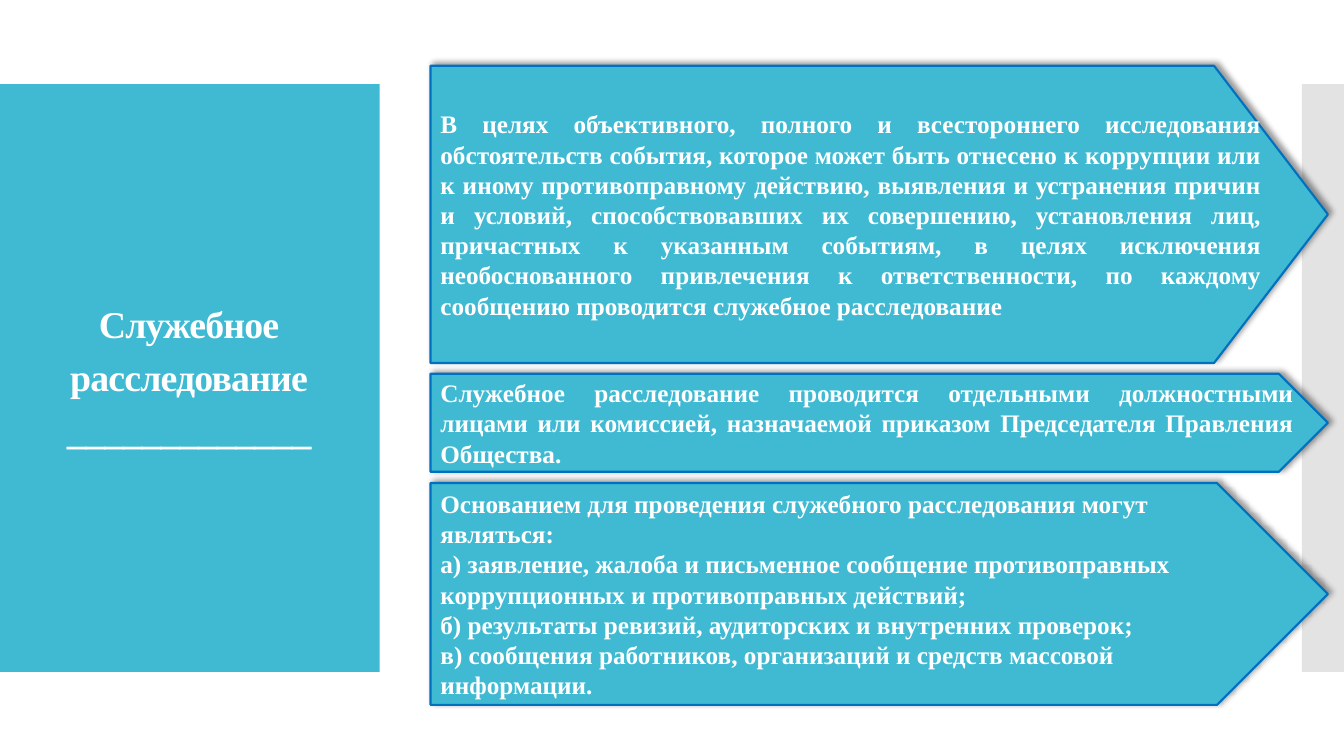
from copy import deepcopy

from lxml.etree import SubElement
from pptx import Presentation
from pptx.dml.color import RGBColor
from pptx.enum.shapes import MSO_SHAPE
from pptx.enum.text import MSO_ANCHOR, MSO_AUTO_SIZE, PP_ALIGN
from pptx.oxml.ns import qn
from pptx.util import Pt

TEAL = RGBColor(0x40, 0xBA, 0xD2)
BLUE = RGBColor(0x00, 0x70, 0xC0)
GRAY = RGBColor(0xC8, 0xC8, 0xC8)
WHITE = RGBColor(0xFF, 0xFF, 0xFF)
BLACK = RGBColor(0x00, 0x00, 0x00)

SLIDE_WIDTH, SLIDE_HEIGHT = 960, 540
BAND_TOP, BAND_HEIGHT = 60, 420
ARROW_LEFT, ARROW_WIDTH = 307.5, 641

TITLE_LINES = [("Служебное", 27), ("расследование", 27), ("_____________", 28)]

PURPOSE = [
    "В целях объективного, полного и всестороннего исследования обстоятельств "
    "события, которое может быть отнесено к коррупции или к иному противоправному "
    "действию, выявления и устранения причин и условий, способствовавших их "
    "совершению, установления лиц, причастных к указанным событиям, в целях "
    "исключения необоснованного привлечения к ответственности, по каждому "
    "сообщению проводится служебное расследование",
]
INVESTIGATORS = [
    "Служебное расследование проводится отдельными должностными лицами или "
    "комиссией, назначаемой приказом Председателя Правления Общества.",
]
GROUNDS = [
    "Основанием для проведения служебного расследования могут являться:",
    "а) заявление, жалоба и письменное сообщение противоправных коррупционных "
    "и противоправных действий;",
    "б) результаты ревизий, аудиторских и внутренних проверок;",
    "в) сообщения работников, организаций и средств массовой информации.",
]

# top, height, point depth relative to height, alignment, paragraphs
ARROWS = [
    (267, 70, 0.5, PP_ALIGN.JUSTIFY, INVESTIGATORS),
    (345, 158.5, 0.5, PP_ALIGN.LEFT, GROUNDS),
    (47, 212.3, 0.383, PP_ALIGN.JUSTIFY, PURPOSE),
]


def add_text(paragraph, text, size=18, color=WHITE, font="Times New Roman", bold=True, spacing=None):
    run = paragraph.add_run()
    run.text = text
    run.font.size = Pt(size)
    run.font.name = font
    run.font.bold = bold
    run.font.color.rgb = color
    if spacing is not None:
        run._r.get_or_add_rPr().set("spc", str(round(spacing * 100)))
    return run


def set_alpha(color_element, percent):
    SubElement(color_element, qn("a:alpha"), val=str(percent * 1000))


class SlideBuilder:
    def __init__(self, slide, fill=TEAL, outline=BLUE):
        self.slide = slide
        self.fill = fill
        self.outline = outline

    def add_filled_shape(self, kind, left, top, width, height, color):
        shape = self.slide.shapes.add_shape(kind, Pt(left), Pt(top), Pt(width), Pt(height))
        shape.shadow.inherit = False
        shape.fill.solid()
        shape.fill.fore_color.rgb = color
        shape.line.fill.background()
        return shape

    def add_band(self, left, width, color, opacity=None):
        band = self.add_filled_shape(MSO_SHAPE.RECTANGLE, left, BAND_TOP, width, BAND_HEIGHT, color)
        if opacity is not None:
            set_alpha(band._element.spPr.find(".//" + qn("a:srgbClr")), opacity)

    def add_title(self, lines, left, top, width, height):
        title = self.slide.shapes.title
        title.left, title.top, title.width, title.height = map(Pt, (left, top, width, height))
        frame = title.text_frame
        frame.word_wrap = True
        frame.auto_size = MSO_AUTO_SIZE.NONE
        frame.vertical_anchor = MSO_ANCHOR.MIDDLE
        paragraph = frame.paragraphs[0]
        paragraph.alignment = PP_ALIGN.CENTER
        paragraph.line_spacing = 1.15
        for index, (text, size) in enumerate(lines):
            if index:
                paragraph.add_line_break()
                line_break = paragraph._p.findall(qn("a:br"))[-1]
                line_break.append(deepcopy(run._r.rPr))
            run = add_text(paragraph, text, size=size, spacing=-0.6)

    def add_arrow(self, top, height, depth, alignment, texts):
        arrow = self.add_filled_shape(
            MSO_SHAPE.PENTAGON, ARROW_LEFT, top, ARROW_WIDTH, height, self.fill)
        arrow.adjustments[0] = depth
        arrow.line.color.rgb = self.outline
        arrow.line.width = Pt(1.5)
        self.add_shadow(arrow)
        frame = arrow.text_frame
        frame.word_wrap = True
        frame.vertical_anchor = MSO_ANCHOR.MIDDLE
        for index, text in enumerate(texts):
            paragraph = frame.add_paragraph() if index else frame.paragraphs[0]
            paragraph.alignment = alignment
            add_text(paragraph, text)

    def add_shadow(self, shape):
        """Cast a soft shadow up and to the right."""
        effects = shape._element.spPr.find(qn("a:effectLst"))
        shadow = SubElement(
            effects, qn("a:outerShdw"), blurRad=str(Pt(4)), dist=str(Pt(3)),
            dir=str(315 * 60000), algn="bl", rotWithShape="0")
        set_alpha(SubElement(shadow, qn("a:srgbClr"), val=str(BLACK)), 40)


def main():
    presentation = Presentation()
    presentation.slide_width = Pt(SLIDE_WIDTH)
    presentation.slide_height = Pt(SLIDE_HEIGHT)
    slide = presentation.slides.add_slide(presentation.slide_layouts[5])
    builder = SlideBuilder(slide)

    builder.add_band(0, 271.2, TEAL)
    builder.add_band(930, 30, GRAY, opacity=50)
    # The title placeholder exists first, so it is raised above the bands.
    slide.shapes._spTree.append(slide.shapes.title._element)
    builder.add_title(TITLE_LINES, 0, 122.5, 270, 288.5)
    for arrow in ARROWS:
        builder.add_arrow(*arrow)

    presentation.save("out.pptx")


if __name__ == "__main__":
    main()
